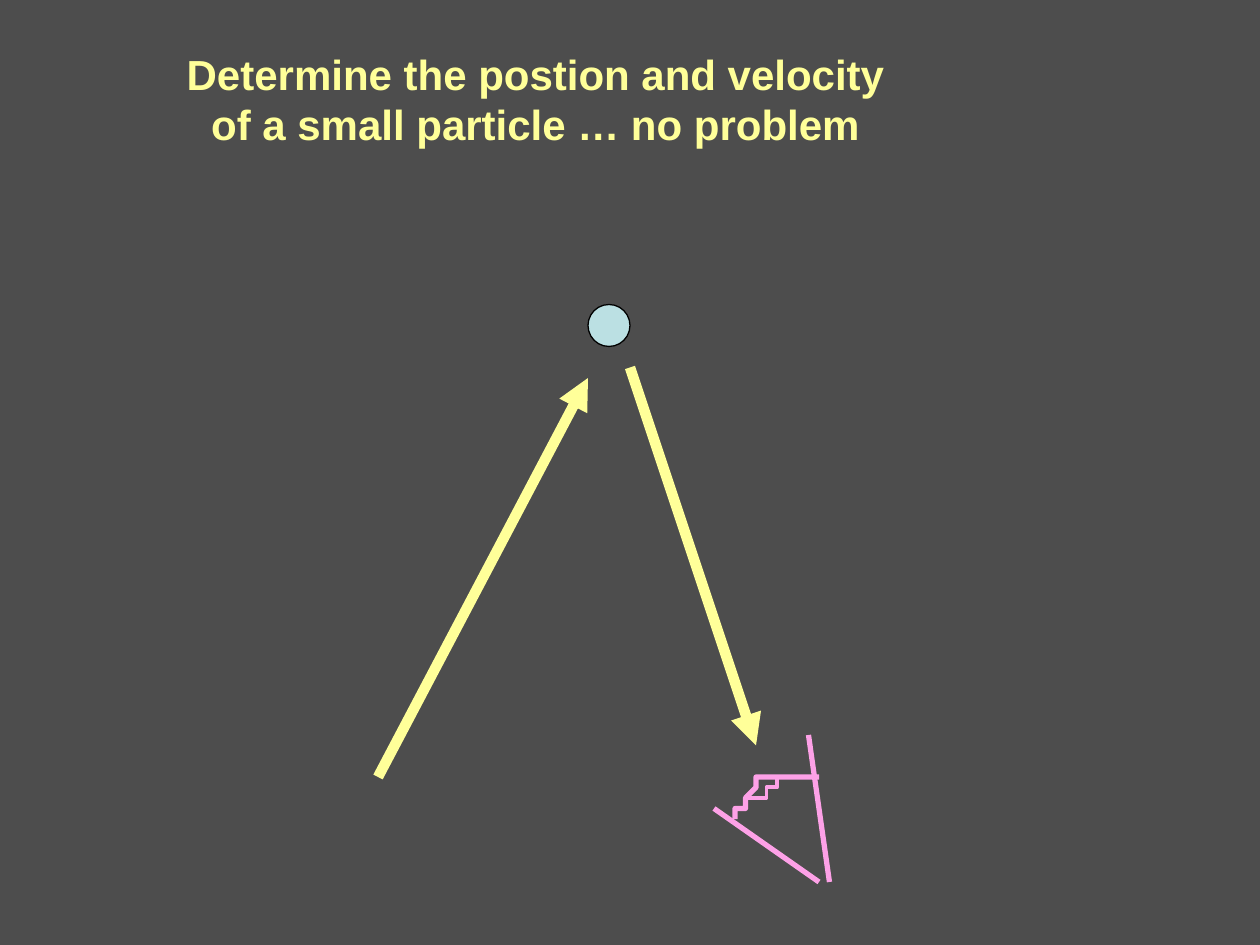
from lxml import etree
from pptx import Presentation, util as u
from pptx.dml.color import RGBColor
from pptx.enum import shapes, text
from pptx.oxml.ns import qn

COLORS = {
    "background": "4D4D4D",
    "light": "FFFF99",
    "eye": "FDA1E7",
    "particle": "BBE0E3",
    "outline": "000000",
}
GRID_CM = 2.54 / 12  # the drawing sits on a grid of twelve units to the inch


def grid(units):
    return u.Cm(units * GRID_CM)


def color(name):
    return RGBColor.from_string(COLORS[name])


def style_line(line, color_name, width):
    line.color.rgb = color(color_name)
    line.width = u.Pt(width)


def add_title(slide, words, left, top, width, height):
    title = slide.shapes.title
    title.left, title.top = grid(left), grid(top)
    title.width, title.height = grid(width), grid(height)
    frame = title.text_frame
    frame.word_wrap = True
    frame.vertical_anchor = text.MSO_ANCHOR.TOP
    frame.auto_size = text.MSO_AUTO_SIZE.SHAPE_TO_FIT_TEXT
    paragraph = frame.paragraphs[0]
    paragraph.alignment = text.PP_ALIGN.CENTER
    paragraph.space_before = u.Pt(12)
    run = paragraph.add_run()
    run.text = words
    run.font.name = "Arial"
    run.font.size = u.Pt(24)
    run.font.bold = True
    run.font.color.rgb = color("light")


def add_particle(slide, left, top, diameter):
    particle = slide.shapes.add_shape(
        shapes.MSO_SHAPE.OVAL, grid(left), grid(top), grid(diameter), grid(diameter))
    particle.shadow.inherit = False
    particle.fill.solid()
    particle.fill.fore_color.rgb = color("particle")
    style_line(particle.line, "outline", 0.75)


def add_straight(slide, start, end, color_name, width, arrow=False):
    straight = slide.shapes.add_connector(
        shapes.MSO_CONNECTOR.STRAIGHT, *map(grid, start + end))
    style_line(straight.line, color_name, width)
    if arrow:
        etree.SubElement(straight.line._get_or_add_ln(), qn("a:tailEnd"), type="triangle")
    etree.SubElement(straight._element.spPr, qn("a:effectLst"))


def bezier(p0, p1, p2, p3, steps=12):
    """Points along a cubic curve, without its start."""
    for step in range(1, steps + 1):
        t = step / steps
        s = 1 - t
        yield tuple(s**3 * a + 3 * s * s * t * b + 3 * s * t * t * c + t**3 * d
                    for a, b, c, d in zip(p0, p1, p2, p3))


def add_curve(slide, knots, width):
    """Draw an open line through cubic segments that share their end knots."""
    points = [point for i in range(0, len(knots) - 1, 3)
              for point in bezier(*knots[i:i + 4])]
    builder = slide.shapes.build_freeform(*knots[0], scale=grid(1000) / 1000)
    builder.add_line_segments(points, close=False)
    curve = builder.convert_to_shape()
    curve.shadow.inherit = False
    curve.fill.background()
    style_line(curve.line, "eye", width)


def add_eye(slide):
    add_curve(slide, [(70, 78), (70.8, 76.3), (71.6, 74.6), (73, 74),
                      (74.3, 73.3), (77.2, 74), (78, 74)], 3)
    add_straight(slide, (68, 77), (78, 84), "eye", 3)
    add_straight(slide, (77, 70), (79, 84), "eye", 3)
    add_curve(slide, [(71, 76), (71.8, 76.2), (72.5, 76.3), (73, 76),
                      (73.4, 75.7), (73.8, 74.3), (74, 74)], 2.25)


def main():
    deck = Presentation()
    deck.slide_width, deck.slide_height = u.Cm(25.4), u.Cm(19.05)
    slide = deck.slides.add_slide(deck.slide_layouts.get_by_name("Title Only"))
    slide.background.fill.solid()
    slide.background.fill.fore_color.rgb = color("background")

    add_particle(slide, 56, 29, 4)
    add_straight(slide, (36, 74), (56, 36), "light", 6, arrow=True)
    add_straight(slide, (60, 35), (72, 71), "light", 6, arrow=True)
    add_eye(slide)
    add_title(slide, "Determine the postion and velocity of a small particle … no problem",
              16, 4, 70, 10.8)
    deck.save("out.pptx")


if __name__ == "__main__":
    main()
